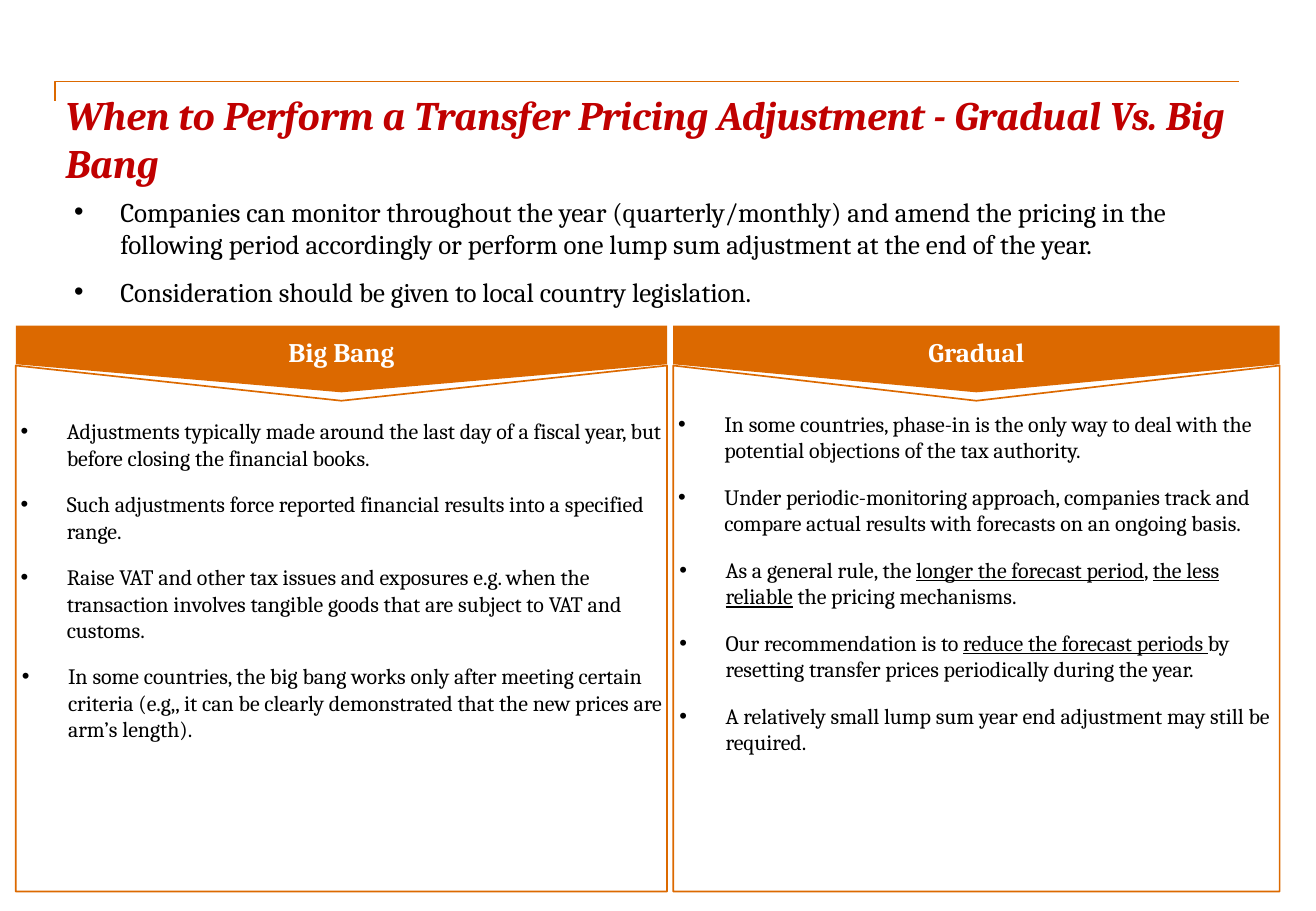
from dataclasses import dataclass

from lxml.etree import SubElement
from pptx import Presentation
from pptx.dml.color import RGBColor
from pptx.enum.shapes import MSO_SHAPE
from pptx.enum.text import MSO_ANCHOR, MSO_AUTO_SIZE, PP_ALIGN
from pptx.oxml.ns import qn
from pptx.util import Inches, Pt


@dataclass(frozen=True)
class Theme:
    font: str = "Cambria"
    accent: RGBColor = RGBColor(0xDC, 0x69, 0x00)
    heading: RGBColor = RGBColor(0xC0, 0x00, 0x00)
    text: RGBColor = RGBColor(0, 0, 0)
    paper: RGBColor = RGBColor(0xFF, 0xFF, 0xFF)
    title_size: float = 24
    intro_size: float = 16
    banner_size: float = 15.9
    detail_size: float = 13
    line_width: float = 1


THEME = Theme()

# The slide is a grid of 108.3 columns by 75 rows with square cells.
GRID_COLUMNS, GRID_ROWS = 108.3, 75
BANNER_TOP, BANNER_DEPTH = 26.8, 5.5
PANEL_TOP, PANEL_BOTTOM, PANEL_NOTCH = 30.1, 73.4, 2.9

TITLE = "When to Perform a Transfer Pricing Adjustment - Gradual Vs. Big Bang"
INTRO = [
    "Companies can monitor throughout the year (quarterly/monthly) and amend the pricing "
    "in the following period accordingly or perform one lump sum adjustment at the end of the year.",
    "Consideration should be given to local country legislation.",
]
# Underlined words stand between underscores.
BIG_BANG = [
    "Adjustments typically made around the last day of a fiscal year, but before closing "
    "the financial books.",
    "Such adjustments force reported financial results into a specified range.",
    "Raise VAT and other tax issues and exposures e.g. when the transaction involves "
    "tangible goods that are subject to VAT and customs.",
    "In some countries, the big bang works only after meeting certain criteria (e.g,, it can "
    "be clearly demonstrated that the new prices are arm’s length).",
]
GRADUAL = [
    "In some countries, phase-in is the only way to deal with the potential objections "
    "of the tax authority.",
    "Under periodic-monitoring approach, companies track and compare actual results "
    "with forecasts on an ongoing basis.",
    "As a general rule, the _longer the forecast period_, _the less reliable_ the pricing mechanisms.",
    "Our recommendation is to _reduce the forecast periods _by resetting transfer prices "
    "periodically during the year.",
    "A relatively small lump sum year end adjustment may still be required.",
]


def cells(count):
    """Length of a number of grid cells."""
    return Inches(round(count / 10, 3))


def place(shape, left, top, width, height):
    shape.left, shape.top = cells(left), cells(top)
    shape.width, shape.height = cells(width), cells(height)


def set_frame(frame, anchor, side=0, top=0, wrap=True):
    frame.auto_size = MSO_AUTO_SIZE.NONE
    frame.word_wrap = wrap
    frame.vertical_anchor = anchor
    frame.margin_left = frame.margin_right = cells(side)
    frame.margin_top, frame.margin_bottom = cells(top), 0


def set_font(paragraph, size, color, bold=False, italic=False):
    font = paragraph.font
    font.name, font.size = THEME.font, Pt(size)
    font.bold, font.italic = bold, italic
    font.color.rgb = color


def add_bullet(paragraph, indent):
    properties = paragraph._p.get_or_add_pPr()
    properties.set("marL", str(cells(indent)))
    properties.set("indent", str(-cells(3.8)))
    SubElement(properties, qn("a:buFont")).set("typeface", "Arial")
    SubElement(properties, qn("a:buChar")).set("char", "•")


def fill_list(frame, items, size, before, after, wide_from=None):
    """Bulleted list; items from wide_from on are indented slightly more."""
    for index, item in enumerate(items):
        paragraph = frame.paragraphs[0] if index == 0 else frame.add_paragraph()
        paragraph.alignment = PP_ALIGN.LEFT
        paragraph.space_before, paragraph.space_after = Pt(before), Pt(after)
        set_font(paragraph, size, THEME.text)
        wide = wide_from is not None and index >= wide_from
        add_bullet(paragraph, 3.9 if wide else 3.8)
        for part, text in enumerate(item.split("_")):
            run = paragraph.add_run()
            run.text = text
            if part % 2:
                run.font.underline = True


def add_outline(slide, points, closed):
    (left, top), *others = [(cells(x), cells(y)) for x, y in points]
    builder = slide.shapes.build_freeform(left, top, scale=1.0)
    builder.add_line_segments(others, close=closed)
    shape = builder.convert_to_shape()
    shape.shadow.inherit = False
    shape.line.color.rgb = THEME.accent
    shape.line.width = Pt(THEME.line_width)
    if closed:
        shape.fill.solid()
        shape.fill.fore_color.rgb = THEME.paper
    else:
        shape.fill.background()
    return shape


def add_banner(slide, left, width, label):
    """Pentagon turned to point down, with its label kept level."""
    banner = slide.shapes.add_shape(MSO_SHAPE.PENTAGON, 0, 0, 0, 0)
    place(banner, left + (width - BANNER_DEPTH) / 2,
          BANNER_TOP + (BANNER_DEPTH - width) / 2, BANNER_DEPTH, width)
    banner.rotation = 90
    banner.adjustments[0] = 0.42
    banner.shadow.inherit = False
    banner.fill.solid()
    banner.fill.fore_color.rgb = THEME.accent
    banner.line.fill.background()
    frame = banner.text_frame
    set_frame(frame, MSO_ANCHOR.MIDDLE, wrap=False)
    frame._txBody.bodyPr.set("vert", "vert270")
    paragraph = frame.paragraphs[0]
    paragraph.text = label
    paragraph.alignment = PP_ALIGN.CENTER
    set_font(paragraph, THEME.banner_size, THEME.paper, bold=True)


def add_panel(slide, left, width, items, text_top, wide_from):
    right = left + width
    panel = add_outline(slide, [
        (left, PANEL_TOP), (left + width / 2, PANEL_TOP + PANEL_NOTCH),
        (right, PANEL_TOP), (right, PANEL_BOTTOM), (left, PANEL_BOTTOM),
    ], closed=True)
    set_frame(panel.text_frame, MSO_ANCHOR.TOP, side=0.4, top=text_top)
    fill_list(panel.text_frame, items, THEME.detail_size, 6, 6, wide_from)


def add_title(slide):
    title = slide.shapes.title
    place(title, 5.4, 7.4, 95.7, 10)
    set_frame(title.text_frame, MSO_ANCHOR.TOP)
    paragraph = title.text_frame.paragraphs[0]
    paragraph.text = TITLE
    paragraph.alignment = PP_ALIGN.LEFT
    set_font(paragraph, THEME.title_size, THEME.heading, bold=True, italic=True)


def add_intro(slide):
    body = slide.placeholders[1]
    place(body, 6.1, 16.1, 95.7, 10.4)
    set_frame(body.text_frame, MSO_ANCHOR.TOP)
    fill_list(body.text_frame, INTRO, THEME.intro_size, 0, 9)


def main():
    presentation = Presentation()
    presentation.slide_width = cells(GRID_COLUMNS)
    presentation.slide_height = cells(GRID_ROWS)
    slide = presentation.slides.add_slide(presentation.slide_layouts[1])

    add_outline(slide, [(4.5, 8.3), (4.5, 6.7), (102, 6.7)], closed=False)
    add_title(slide)
    add_intro(slide)
    for left, width, label, items, text_top, wide_from in [
        (1.3, 53.6, "Big Bang", BIG_BANG, 4.3, 3),
        (55.4, 49.9, "Gradual", GRADUAL, 3.7, 2),
    ]:
        add_banner(slide, left, width, label)
        add_panel(slide, left, width, items, text_top, wide_from)

    presentation.save("out.pptx")


if __name__ == "__main__":
    main()
